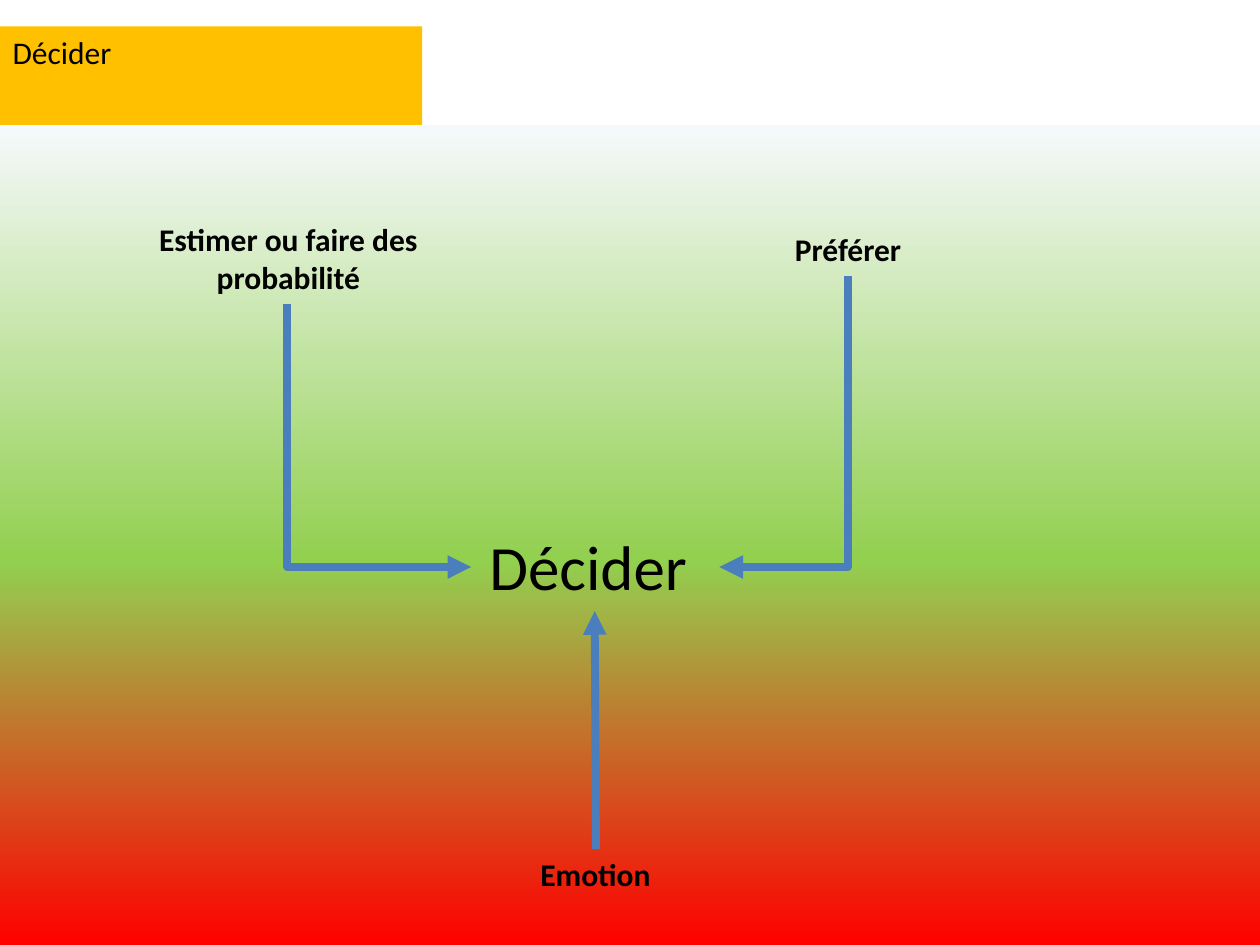
from dataclasses import dataclass

from lxml import etree
from pptx import Presentation
from pptx import util as u
from pptx.dml.color import RGBColor
from pptx.enum import shapes, text
from pptx.oxml.ns import qn


@dataclass(frozen=True)
class Theme:
    font: str = "Calibri"
    ink: str = "000000"
    banner: str = "FFC000"
    arrow: str = "4B7EBC"
    gradient: tuple = ((0, "F6F9FC"), (53, "92D050"), (100, "FF0000"))
    label_size: float = 18
    decision_size: float = 36
    arrow_width: float = 4.5


@dataclass(frozen=True)
class Label:
    words: str
    box: tuple
    size: float
    bold: bool = True
    align: text.PP_ALIGN = text.PP_ALIGN.CENTER
    wrap: bool = True


@dataclass(frozen=True)
class Arrow:
    start: tuple
    end: tuple
    bent: bool = False


THEME = Theme()
LABELS = (
    Label("Décider ", (3.74, 4.14, 1.97, 0.71), THEME.decision_size, bold=False),
    Label("Estimer ou faire des probabilité", (0.91, 1.7, 2.76, 0.71), THEME.label_size),
    Label("Préférer", (6.02, 1.78, 1.42, 0.4), THEME.label_size),
    Label("Emotion", (4.19, 6.74, 1.08, 0.4), THEME.label_size,
          align=text.PP_ALIGN.LEFT, wrap=False),
)
ARROWS = (
    Arrow((4.73, 6.74), (4.72, 4.85)),
    Arrow((6.73, 2.19), (5.71, 4.5), bent=True),
    Arrow((2.28, 2.41), (3.74, 4.5), bent=True),
)


def inches(values: tuple) -> list:
    return [u.Inches(value) for value in values]


def apply(target, formats: dict) -> None:
    for name, value in formats.items():
        setattr(target, name, value)


def write(shape, label: Label) -> None:
    frame = shape.text_frame
    frame.text = label.words
    apply(frame, {"word_wrap": label.wrap,
                  "auto_size": text.MSO_AUTO_SIZE.SHAPE_TO_FIT_TEXT,
                  "vertical_anchor": text.MSO_ANCHOR.TOP})
    paragraph = frame.paragraphs[0]
    paragraph.alignment = label.align
    font = paragraph.runs[0].font
    apply(font, {"name": THEME.font, "size": u.Pt(label.size), "bold": label.bold})
    font.color.rgb = RGBColor.from_string(THEME.ink)


def draw_backdrop(slide) -> None:
    backdrop = slide.shapes.add_shape(
        shapes.MSO_SHAPE.RECTANGLE, *inches((0, 0.99, 10, 6.51)))
    backdrop.shadow.inherit = False
    backdrop.line.fill.background()
    backdrop.fill.gradient()
    # The gradient runs from top to bottom with three stops
    gradient = backdrop.fill._xPr.find(qn("a:gradFill"))
    stops = gradient.find(qn("a:gsLst"))
    for stop in list(stops):
        stops.remove(stop)
    for percent, color in THEME.gradient:
        stop = etree.SubElement(stops, qn("a:gs"), pos=str(percent * 1000))
        etree.SubElement(stop, qn("a:srgbClr"), val=color)
    direction = gradient.find(qn("a:lin"))
    direction.set("ang", "5400000")
    direction.set("scaled", "0")


def draw_banner(slide) -> None:
    banner = slide.shapes.title
    box = inches((0, 0.21, 3.35, 0.4))
    apply(banner, dict(zip(("left", "top", "width", "height"), box)))
    banner.fill.solid()
    banner.fill.fore_color.rgb = RGBColor.from_string(THEME.banner)
    write(banner, Label("Décider", (), THEME.label_size, bold=False,
                        align=text.PP_ALIGN.LEFT))


def draw_label(slide, label: Label) -> None:
    write(slide.shapes.add_textbox(*inches(label.box)), label)


def draw_arrow(slide, arrow: Arrow) -> None:
    (x1, y1), (x2, y2) = arrow.start, arrow.end
    kind = shapes.MSO_CONNECTOR.STRAIGHT
    rightward = x2 > x1
    if arrow.bent:
        # A one-corner elbow that goes down first is a turned frame:
        # its sides are swapped around the same centre
        kind = shapes.MSO_CONNECTOR.ELBOW
        middle_x, middle_y = (x1 + x2) / 2, (y1 + y2) / 2
        half_width, half_height = abs(y2 - y1) / 2, abs(x2 - x1) / 2
        x1, x2 = middle_x - half_width, middle_x + half_width
        y1, y2 = middle_y - half_height, middle_y + half_height
        if rightward:
            x1, x2 = x2, x1
    connector = slide.shapes.add_connector(kind, *inches((x1, y1, x2, y2)))
    properties = connector._element.spPr
    if arrow.bent:
        properties.find(qn("a:prstGeom")).set("prst", "bentConnector2")
        turn = 270 if rightward else 90
        properties.find(qn("a:xfrm")).set("rot", str(turn * 60000))
    connector.line.width = u.Pt(THEME.arrow_width)
    connector.line.color.rgb = RGBColor.from_string(THEME.arrow)
    etree.SubElement(properties.find(qn("a:ln")), qn("a:tailEnd"), type="triangle")
    etree.SubElement(properties, qn("a:effectLst"))


def main() -> None:
    deck = Presentation()
    apply(deck, {"slide_width": u.Inches(10), "slide_height": u.Inches(7.5)})
    slide = deck.slides.add_slide(deck.slide_layouts.get_by_name("Title Only"))

    # Background and title
    draw_backdrop(slide)
    draw_banner(slide)

    # The decision, its three sources and the arrows between them
    for label in LABELS:
        draw_label(slide, label)
    for arrow in ARROWS:
        draw_arrow(slide, arrow)

    deck.save("out.pptx")


if __name__ == "__main__":
    main()
